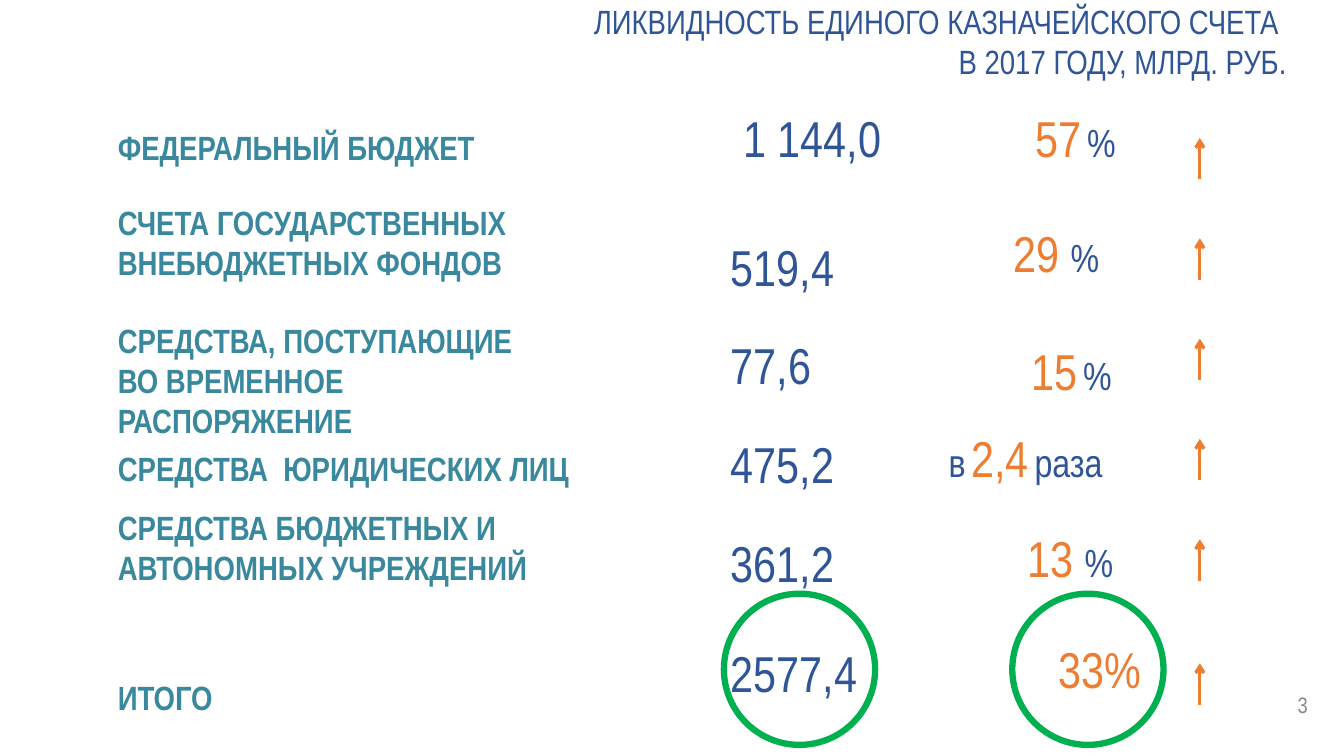
from pptx import Presentation
from pptx.dml.color import RGBColor
from pptx.enum.shapes import MSO_CONNECTOR, MSO_SHAPE
from pptx.enum.text import MSO_ANCHOR, MSO_AUTO_SIZE, PP_ALIGN
from pptx.oxml.ns import qn
from pptx.util import Inches, Pt
from lxml import etree

BLUE = RGBColor(0x2F, 0x55, 0x97)
TEAL = RGBColor(0x3A, 0x88, 0x9D)
ORANGE = RGBColor(0xED, 0x7D, 0x31)
GREEN = RGBColor(0x00, 0xB0, 0x50)
GREY = RGBColor(0x89, 0x89, 0x89)

LEFT, RIGHT = PP_ALIGN.LEFT, PP_ALIGN.RIGHT
TOP, MIDDLE = MSO_ANCHOR.TOP, MSO_ANCHOR.MIDDLE
NO_AUTOFIT = MSO_AUTO_SIZE.NONE
STRAIGHT = MSO_CONNECTOR.STRAIGHT
OVAL = MSO_SHAPE.OVAL

FONT = "Arial Narrow"
TITLE_ONLY = 5
LABEL_LEFT = 1.07
VALUE_LEFT = 7.15
ARROW_X = 11.9
ARROW_LENGTH = 0.41
FIRST_ARROW_TOP, ARROW_STEP = 1.37, 0.995
TOTAL_ARROW_TOP = 6.58
CIRCLE_TOP, CIRCLE_SIZE = 5.89, 1.5

TITLE = ["ЛИКВИДНОСТЬ ЕДИНОГО КАЗНАЧЕЙСКОГО СЧЕТА ", "В 2017 ГОДУ, МЛРД. РУБ."]

# text, top, width, height
LABELS = [
    ("ФЕДЕРАЛЬНЫЙ БЮДЖЕТ", 1.21, 4.33, 0.5),
    ("СЧЕТА ГОСУДАРСТВЕННЫХ ВНЕБЮДЖЕТНЫХ ФОНДОВ", 1.95, 4.84, 0.91),
    ("СРЕДСТВА, ПОСТУПАЮЩИЕ ВО ВРЕМЕННОЕ РАСПОРЯЖЕНИЕ", 3.12, 4.56, 0.91),
    ("СРЕДСТВА  ЮРИДИЧЕСКИХ ЛИЦ", 4.39, 4.74, 0.5),
    ("СРЕДСТВА БЮДЖЕТНЫХ И АВТОНОМНЫХ УЧРЕЖДЕНИЙ", 4.98, 4.72, 0.91),
    ("ИТОГО", 6.67, 2.28, 0.5),
]

# text, top, width, alignment
VALUES = [
    ("1 144,0", 1.01, 1.69, RIGHT),
    ("519,4", 2.29, 1.4, LEFT),
    ("77,6", 3.27, 1.07, LEFT),
    ("475,2", 4.25, 1.38, LEFT),
    ("361,2", 5.23, 1.28, LEFT),
    ("2577,4", 6.32, 1.71, LEFT),
]

SMALL_SPACE = (" ", 18, BLUE)
PERCENT = ("%", 28, BLUE)

# runs (text, size, colour), left, top, width, alignment
GROWTH = [
    ([("57", 36, ORANGE), SMALL_SPACE, PERCENT], 10.17, 1.01, 1.05, LEFT),
    ([("29 ", 36, ORANGE), PERCENT], 9.95, 2.15, 1.27, LEFT),
    ([("15", 36, ORANGE), SMALL_SPACE, PERCENT], 10.13, 3.32, 1.09, LEFT),
    ([("в", 28, BLUE), SMALL_SPACE, ("2,4", 36, ORANGE), SMALL_SPACE,
      ("раза", 28, BLUE)], 9.31, 4.19, 1.91, LEFT),
    ([("13 ", 36, ORANGE), PERCENT], 10.09, 5.18, 1.13, LEFT),
    ([("33%", 36, ORANGE)], 10.15, 6.28, 1.27, RIGHT),
]


def add_run(paragraph, text, *, size, color, bold=False):
    run = paragraph.add_run()
    run.text = text
    run.font.name = FONT
    run.font.size = Pt(size)
    run.font.bold = bold
    run.font.color.rgb = color


def add_text(slide, runs, left, top, width, height, *, bold=False,
             align=LEFT, anchor=TOP):
    """Add a one-paragraph text box; runs are (text, size, colour)."""
    box = slide.shapes.add_textbox(Inches(left), Inches(top),
                                   Inches(width), Inches(height))
    frame = box.text_frame
    frame.word_wrap = True
    frame.vertical_anchor = anchor
    paragraph = frame.paragraphs[0]
    paragraph.alignment = align
    for text, size, color in runs:
        add_run(paragraph, text, size=size, color=color, bold=bold)


def fill_title(slide):
    title = slide.shapes.title
    title.left, title.top = Inches(4.23), Inches(-0.04)
    title.width, title.height = Inches(8.63), Inches(0.91)
    frame = title.text_frame
    frame.word_wrap = True
    frame.auto_size = NO_AUTOFIT
    frame.vertical_anchor = TOP
    for index, line in enumerate(TITLE):
        paragraph = frame.add_paragraph() if index else frame.paragraphs[0]
        paragraph.alignment = RIGHT
        add_run(paragraph, line, size=24, color=BLUE)


def add_up_arrow(slide, top):
    arrow = slide.shapes.add_connector(
        STRAIGHT, Inches(ARROW_X), Inches(top + ARROW_LENGTH),
        Inches(ARROW_X), Inches(top))
    arrow.line.color.rgb = ORANGE
    arrow.line.width = Pt(2.25)
    etree.SubElement(arrow.line._get_or_add_ln(), qn("a:tailEnd"), type="arrow")
    etree.SubElement(arrow._element.spPr, qn("a:effectLst"))


def add_total_circle(slide, left):
    circle = slide.shapes.add_shape(OVAL, Inches(left), Inches(CIRCLE_TOP),
                                    Inches(CIRCLE_SIZE), Inches(CIRCLE_SIZE))
    circle.shadow.inherit = False
    circle.fill.background()
    circle.line.color.rgb = GREEN
    circle.line.width = Pt(4.5)


def main():
    presentation = Presentation()
    presentation.slide_width = Inches(13.33)
    presentation.slide_height = Inches(7.5)
    slide = presentation.slides.add_slide(presentation.slide_layouts[TITLE_ONLY])

    fill_title(slide)
    for row in range(5):
        add_up_arrow(slide, FIRST_ARROW_TOP + row * ARROW_STEP)
    add_up_arrow(slide, TOTAL_ARROW_TOP)
    for left in (7.18, 10.04):
        add_total_circle(slide, left)

    for text, top, width, height in LABELS:
        add_text(slide, [(text, 24, TEAL)], LABEL_LEFT, top, width, height, bold=True)
    for text, top, width, align in VALUES:
        add_text(slide, [(text, 36, BLUE)], VALUE_LEFT, top, width, 0.71, align=align)
    for runs, left, top, width, align in GROWTH:
        add_text(slide, runs, left, top, width, 0.71, align=align)
    add_text(slide, [("3", 16, GREY)], 12.67, 6.79, 0.4, 0.4,
             align=RIGHT, anchor=MIDDLE)

    presentation.save("out.pptx")


if __name__ == "__main__":
    main()
